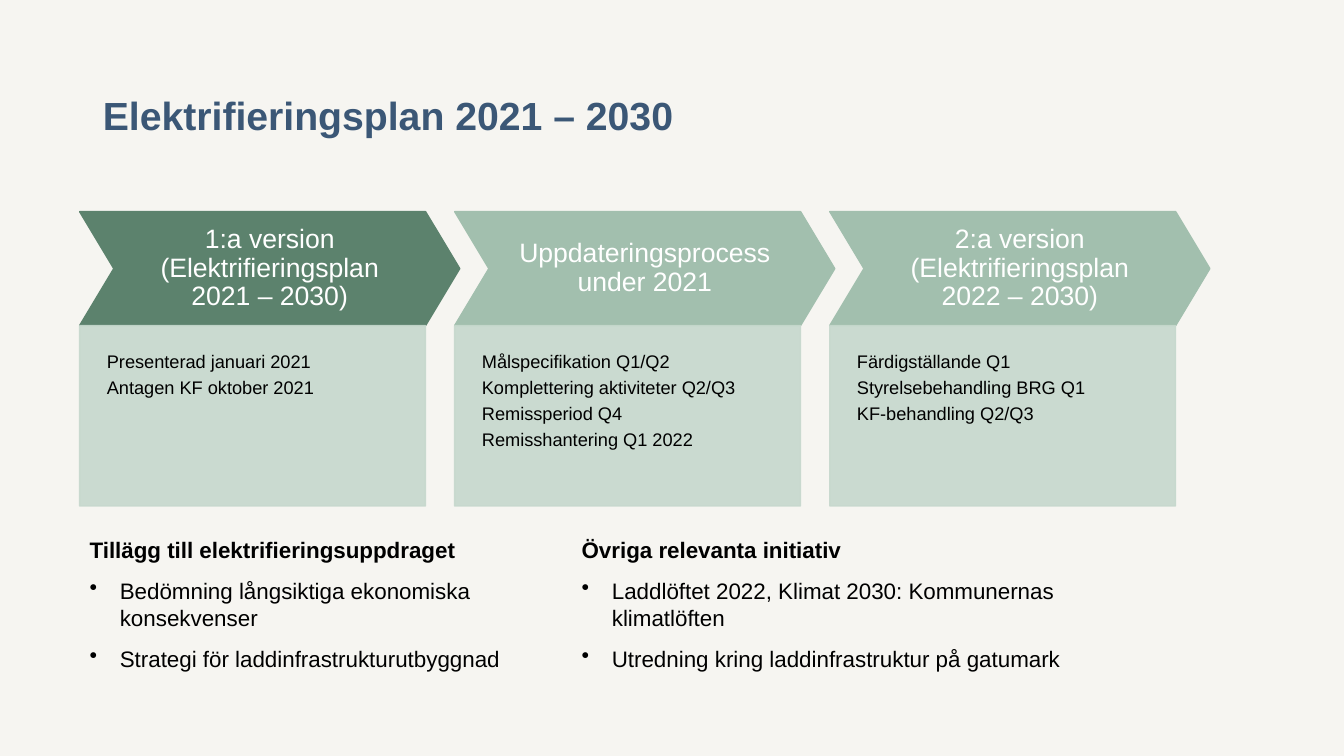
import dataclasses
import typing

import pptx
import pptx.dml.color
import pptx.enum.shapes
import pptx.enum.text
import pptx.oxml
import pptx.oxml.ns
import pptx.util

EMU_PER_PX = 9144


@dataclasses.dataclass(frozen=True)
class Theme:
    font: str = "Arial"
    background: str = "F6F5F1"
    title: str = "3B5776"
    text: str = "000000"
    heading: str = "FFFFFF"
    current: str = "5C826D"
    upcoming: str = "A2BFAE"
    panel: str = "C6D8CD"
    panel_opacity: int = 90
    title_size: int = 28
    heading_size: int = 19
    list_size: int = 16
    detail_size: int = 13


@dataclasses.dataclass(frozen=True)
class Box:
    left: int
    top: int
    width: int
    height: int

    def emu(self) -> list[int]:
        return [px(length) for length in dataclasses.astuple(self)]


@dataclasses.dataclass(frozen=True)
class Phase:
    heading: str
    details: list[str]
    color: str


@dataclasses.dataclass(frozen=True)
class Topic:
    heading: str
    bullets: list[str]


THEME = Theme()
LEFT = 79
PHASE_STEP = 372
TOPIC_STEP = 488
PHASES = [
    Phase(
        "1:a version (Elektrifieringsplan 2021 – 2030)",
        ["Presenterad januari 2021", "Antagen KF oktober 2021"],
        THEME.current,
    ),
    Phase(
        "Uppdateringsprocess under 2021",
        [
            "Målspecifikation Q1/Q2",
            "Komplettering aktiviteter Q2/Q3",
            "Remissperiod Q4",
            "Remisshantering Q1 2022",
        ],
        THEME.upcoming,
    ),
    Phase(
        "2:a version (Elektrifieringsplan 2022 – 2030)",
        ["Färdigställande Q1", "Styrelsebehandling BRG Q1", "KF-behandling Q2/Q3"],
        THEME.upcoming,
    ),
]
TOPICS = [
    Topic(
        "Tillägg till elektrifieringsuppdraget",
        [
            "Bedömning långsiktiga ekonomiska konsekvenser",
            "Strategi för laddinfrastrukturutbyggnad",
        ],
    ),
    Topic(
        "Övriga relevanta initiativ",
        [
            "Laddlöftet 2022, Klimat 2030: Kommunernas klimatlöften",
            "Utredning kring laddinfrastruktur på gatumark",
        ],
    ),
]


def px(length: int) -> int:
    return pptx.util.Emu(length * EMU_PER_PX)


def rgb(color: str) -> pptx.dml.color.RGBColor:
    return pptx.dml.color.RGBColor.from_string(color)


def style(paragraph: typing.Any, size: int, color: str, bold: bool = False) -> None:
    for run in paragraph.runs:
        run.font.name = THEME.font
        run.font.size = pptx.util.Pt(size)
        run.font.bold = bold
        run.font.color.rgb = rgb(color)


def set_insets(frame: typing.Any, left: int, top: int, right: int, bottom: int) -> None:
    frame.margin_left, frame.margin_top = px(left), px(top)
    frame.margin_right, frame.margin_bottom = px(right), px(bottom)


def set_opacity(shape: typing.Any, percent: int) -> None:
    for color in shape.element.spPr.iter(pptx.oxml.ns.qn("a:srgbClr")):
        alpha = color.makeelement(pptx.oxml.ns.qn("a:alpha"), {"val": str(percent * 1000)})
        color.append(alpha)


def add_bullet(paragraph: typing.Any) -> None:
    properties = paragraph._p.get_or_add_pPr()
    properties.set("marL", str(px(30)))
    properties.set("indent", str(px(-30)))
    bullet = properties.makeelement(pptx.oxml.ns.qn("a:buChar"), {"char": "•"})
    properties.append(bullet)


def add_title(slide: typing.Any, text: str) -> None:
    title = slide.shapes.title
    title.left, title.top, title.width, title.height = Box(92, 40, 1150, 145).emu()
    frame = title.text_frame
    frame.text = text
    frame.auto_size = pptx.enum.text.MSO_AUTO_SIZE.NONE
    frame.vertical_anchor = pptx.enum.text.MSO_ANCHOR.BOTTOM
    set_insets(frame, 10, 5, 10, 48)
    paragraph = frame.paragraphs[0]
    paragraph.alignment = pptx.enum.text.PP_ALIGN.LEFT
    paragraph.line_spacing = pptx.util.Pt(31)
    style(paragraph, THEME.title_size, THEME.title, bold=True)


def add_block(
    slide: typing.Any,
    kind: pptx.enum.shapes.MSO_SHAPE,
    box: Box,
    color: str,
    text: str,
) -> typing.Any:
    shape = slide.shapes.add_shape(kind, *box.emu())
    shape.shadow.inherit = False
    shape.fill.solid()
    shape.fill.fore_color.rgb = rgb(color)
    shape.line.color.rgb = rgb(color)
    shape.line.width = pptx.util.Pt(1)
    frame = shape.text_frame
    frame.text = text
    frame.word_wrap = True
    for paragraph in frame.paragraphs:
        paragraph.line_spacing = 0.9
    return shape


def add_phase(slide: typing.Any, phase: Phase, left: int) -> None:
    chevron = add_block(
        slide, pptx.enum.shapes.MSO_SHAPE.CHEVRON,
        Box(left, 210, 377, 113), phase.color, phase.heading,
    )
    chevron.adjustments[0] = 0.3
    set_insets(chevron.text_frame, 14, 14, 14, 14)
    chevron.text_frame.vertical_anchor = pptx.enum.text.MSO_ANCHOR.MIDDLE
    heading = chevron.text_frame.paragraphs[0]
    heading.alignment = pptx.enum.text.PP_ALIGN.CENTER
    style(heading, THEME.heading_size, THEME.heading)

    panel = add_block(
        slide, pptx.enum.shapes.MSO_SHAPE.RECTANGLE,
        Box(left, 323, 343, 179), THEME.panel, "\n".join(phase.details),
    )
    set_opacity(panel, THEME.panel_opacity)
    set_insets(panel.text_frame, 27, 27, 27, 54)
    panel.text_frame.vertical_anchor = pptx.enum.text.MSO_ANCHOR.TOP
    for paragraph in panel.text_frame.paragraphs:
        paragraph.alignment = pptx.enum.text.PP_ALIGN.LEFT
        paragraph.space_after = pptx.util.Pt(4.55)
        style(paragraph, THEME.detail_size, THEME.text)


def add_topic(slide: typing.Any, topic: Topic, left: int) -> None:
    textbox = slide.shapes.add_textbox(*Box(left, 527, 508, 183).emu())
    frame = textbox.text_frame
    frame.word_wrap = True
    set_insets(frame, 10, 5, 10, 5)
    frame.text = "\n".join([topic.heading, *topic.bullets])
    heading, *bullets = frame.paragraphs
    style(heading, THEME.list_size, THEME.text, bold=True)
    for paragraph in bullets:
        add_bullet(paragraph)
        paragraph.space_before = pptx.util.Pt(10)
        style(paragraph, THEME.list_size, THEME.text)


def main() -> None:
    presentation = pptx.Presentation()
    presentation.slide_width, presentation.slide_height = px(1333), px(750)
    slide = presentation.slides.add_slide(presentation.slide_layouts.get_by_name("Title Only"))
    slide.background.fill.solid()
    slide.background.fill.fore_color.rgb = rgb(THEME.background)
    add_title(slide, "Elektrifieringsplan 2021 – 2030")
    for index, phase in enumerate(PHASES):
        add_phase(slide, phase, LEFT + index * PHASE_STEP)
    for index, topic in enumerate(TOPICS):
        add_topic(slide, topic, LEFT + index * TOPIC_STEP)
    presentation.save("out.pptx")


if __name__ == "__main__":
    main()
